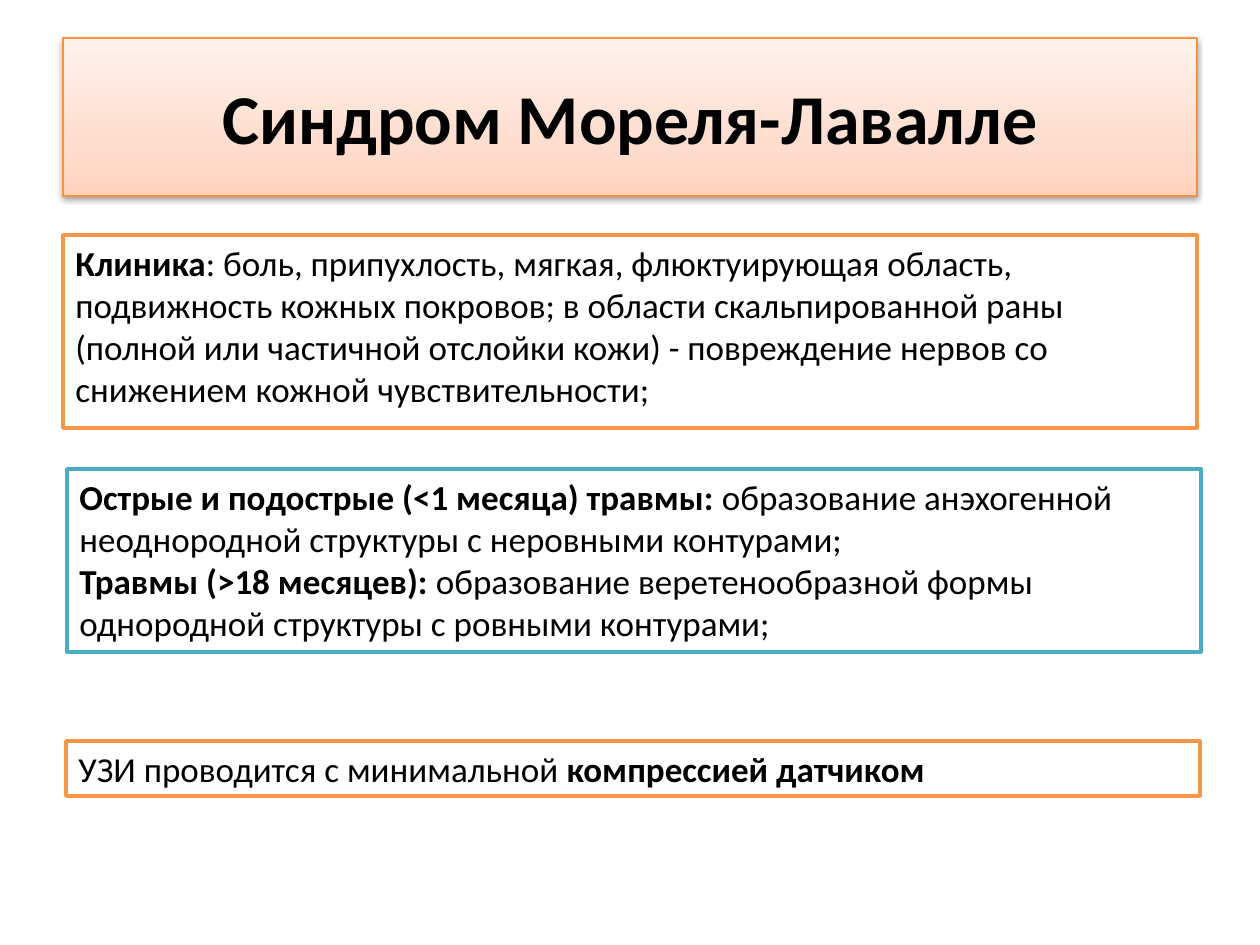
"""Build the Morel-Lavallée syndrome slide."""
from copy import deepcopy
from dataclasses import dataclass

from lxml.etree import SubElement as Sub
from pptx import Presentation
from pptx.dml.color import RGBColor as Rgb
from pptx.enum.shapes import MSO_SHAPE as Kind
from pptx.enum.text import MSO_ANCHOR as Anchor, PP_ALIGN as Align
from pptx.oxml.ns import qn
from pptx.util import Emu, Pt

SCALE = 914400 / 126
WIDTH = 1134
HUES = {
    "white": "FFFFFF", "black": "000000", "orange": "F79646",
    "teal": "4BACC6", "edge": "F69240",
    "deep": "FFD2BD", "mid": "FFDED0", "pale": "FFF2ED",
}


@dataclass(frozen=True)
class Run:
    text: str
    bold: bool = False


@dataclass(frozen=True)
class Box:
    left: int
    top: int
    high: int
    hue: str
    paras: tuple[tuple[Run, ...], ...]
    line: float = 2
    size: int = 20
    title: bool = False


BOXES = (
    Box(63, 235, 193, "orange", ((
        Run("Клиника", True),
        Run(": боль, припухлость, мягкая, флюктуирующая область, "
            "подвижность кожных покровов; в области скальпированной раны "
            "(полной или частичной отслойки кожи) - повреждение нервов со "
            "снижением кожной чувствительности;"),
    ),)),
    Box(63, 38, 158, "edge", ((Run("Синдром Мореля-Лавалле", True),),),
        line=0.75, size=40, title=True),
    Box(67, 469, 183, "teal", (
        (Run("Острые и подострые (<1 месяца) травмы: ", True),
         Run("образование анэхогенной неоднородной структуры "
             "с неровными контурами;")),
        (Run("Травмы (>18 месяцев): ", True),
         Run("образование веретенообразной формы однородной структуры "
             "с ровными контурами;")),
    )),
    Box(66, 741, 55, "orange", ((
        Run("УЗИ проводится с минимальной "),
        Run("компрессией датчиком", True),
    ),)),
)


def px(count: int) -> Emu:
    """Turn pixels into EMU."""
    return Emu(round(count * SCALE))


def tint(name: str) -> Rgb:
    """Look up a named colour."""
    return Rgb.from_string(HUES[name])


def blend(shape) -> None:
    """Fill a shape with the three-stop peach gradient."""
    fill = shape.fill
    fill.gradient()
    fill.gradient_angle = 90
    stops = shape._element.spPr.find(".//" + qn("a:gsLst"))
    stops.insert(1, deepcopy(stops[0]))
    marks = (("deep", 0), ("mid", 0.35), ("pale", 1))
    for stop, (name, pos) in zip(fill.gradient_stops, marks):
        stop.color.rgb = tint(name)
        stop.position = pos


def shade(shape) -> None:
    """Cast a soft shadow below a shape."""
    effects = shape._element.spPr.find(qn("a:effectLst"))
    outer = Sub(effects, qn("a:outerShdw"), blurRad=str(Pt(3.1)),
                dist=str(Pt(1.6)), dir="5400000", rotWithShape="0")
    color = Sub(outer, qn("a:srgbClr"), val=HUES["black"])
    Sub(color, qn("a:alpha"), val="38000")


def write(frame, box: Box) -> None:
    """Write the paragraphs of a box run by run."""
    frame.word_wrap = True
    frame.vertical_anchor = Anchor.MIDDLE if box.title else Anchor.TOP
    for num, runs in enumerate(box.paras):
        para = frame.add_paragraph() if num else frame.paragraphs[0]
        para.alignment = Align.CENTER if box.title else Align.LEFT
        for part in runs:
            run = para.add_run()
            run.text = part.text
            font = run.font
            font.name, font.size, font.bold = "Calibri", Pt(box.size), part.bold
            font.color.rgb = tint("black")


def draw(slide, box: Box) -> None:
    """Draw one framed text box."""
    shape = slide.shapes.add_shape(
        Kind.RECTANGLE, px(box.left), px(box.top), px(WIDTH), px(box.high))
    shape.shadow.inherit = False
    shape.line.color.rgb = tint(box.hue)
    shape.line.width = Pt(box.line)
    if box.title:
        blend(shape)
        shade(shape)
    else:
        shape.fill.solid()
        shape.fill.fore_color.rgb = tint("white")
    write(shape.text_frame, box)


def main() -> None:
    """Build and save the slide."""
    deck = Presentation()
    deck.slide_width, deck.slide_height = px(1260), px(945)
    slide = deck.slides.add_slide(deck.slide_layouts[6])
    for box in BOXES:
        draw(slide, box)
    deck.save("out.pptx")


if __name__ == "__main__":
    main()
